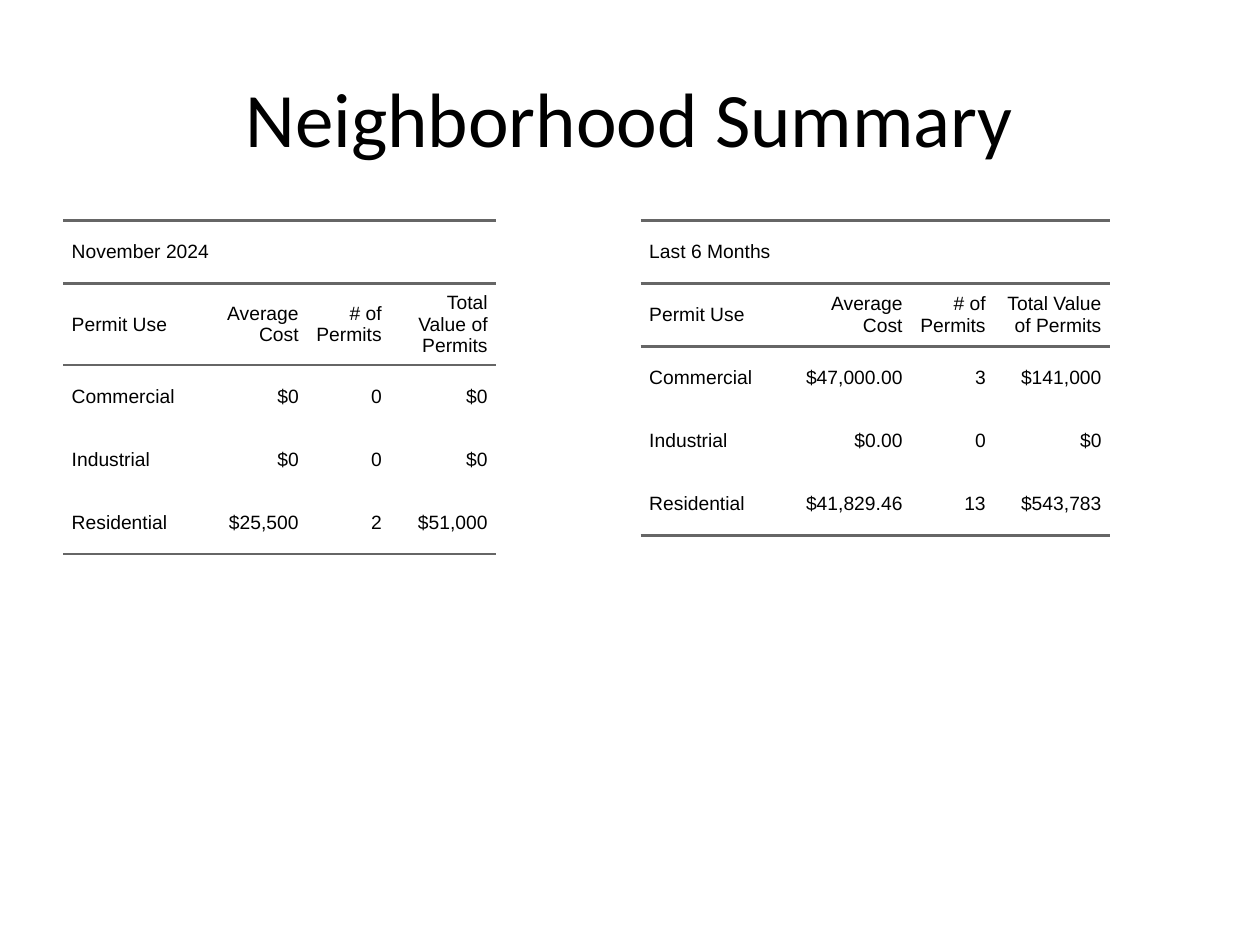
import pptx
import pptx.dml.color
import pptx.enum.text
import pptx.oxml
import pptx.oxml.ns
import pptx.util
from lxml import etree

Pt = pptx.util.Pt
Align = pptx.enum.text.PP_ALIGN
Anchor = pptx.enum.text.MSO_ANCHOR

BLACK = pptx.dml.color.RGBColor(0x00, 0x00, 0x00)
RULE_GRAY = pptx.dml.color.RGBColor(0x66, 0x66, 0x66)

HEADINGS = ["Permit Use", "Average Cost", "# of Permits", "Total Value of Permits"]
NOVEMBER = [
    ["Commercial", "$0", "0", "$0"],
    ["Industrial", "$0", "0", "$0"],
    ["Residential", "$25,500", "2", "$51,000"],
]
SIX_MONTHS = [
    ["Commercial", "$47,000.00", "3", "$141,000"],
    ["Industrial", "$0.00", "0", "$0"],
    ["Residential", "$41,829.46", "13", "$543,783"],
]


def write_text(frame, text, *, font, size, color, align, spacing=0):
    paragraph = frame.paragraphs[0]
    paragraph.alignment = align
    paragraph.space_before = paragraph.space_after = Pt(spacing)
    run = paragraph.add_run()
    run.text = text
    run.font.name = font
    run.font.size = Pt(size)
    run.font.color.rgb = color


def set_border(cell, side, color=None, width=1.5):
    properties = cell._tc.get_or_add_tcPr()
    line = etree.SubElement(properties, pptx.oxml.ns.qn(f"a:ln{side}"))
    if color is None:
        etree.SubElement(line, pptx.oxml.ns.qn("a:noFill"))
        return
    line.set("w", str(Pt(width)))
    fill = etree.SubElement(line, pptx.oxml.ns.qn("a:solidFill"))
    etree.SubElement(fill, pptx.oxml.ns.qn("a:srgbClr")).set("val", str(color))


class SlideBuilder:
    title_font = "Calibri"
    table_font = "Arial"
    cell_margin = 5
    row_height = 36

    def __init__(self, slide):
        self.slide = slide

    def title(self, text, left, top, width, height):
        shape = self.slide.shapes.title
        shape.left, shape.top = Pt(left), Pt(top)
        shape.width, shape.height = Pt(width), Pt(height)
        shape.text_frame.vertical_anchor = Anchor.MIDDLE
        write_text(shape.text_frame, text, font=self.title_font, size=44,
                   color=BLACK, align=Align.CENTER)

    def permit_table(self, caption, records, left, top, widths):
        rows = [[caption, "", "", ""], HEADINGS, *records]
        ruled_edges = {0, 1, 2, len(rows)}
        shape = self.slide.shapes.add_table(
            len(rows), len(widths), Pt(left), Pt(top),
            Pt(sum(widths)), Pt(self.row_height * len(rows)))
        table = shape.table
        table.first_row = table.horz_banding = False
        for column, width in zip(table.columns, widths):
            column.width = Pt(width)
        table.cell(0, 0).merge(table.cell(0, len(widths) - 1))
        for row_index, row in enumerate(rows):
            for column_index, text in enumerate(row):
                cell = table.cell(row_index, column_index)
                self.format_cell(cell, row_index, ruled_edges)
                if text:
                    write_text(cell.text_frame, text, font=self.table_font,
                               size=11, color=BLACK, spacing=5,
                               align=Align.RIGHT if column_index else Align.LEFT)

    def format_cell(self, cell, row_index, ruled_edges):
        cell.vertical_anchor = Anchor.MIDDLE
        cell.margin_left = cell.margin_right = Pt(self.cell_margin)
        cell.margin_top = cell.margin_bottom = Pt(self.cell_margin)
        set_border(cell, "L")
        set_border(cell, "R")
        for side, edge in (("T", row_index), ("B", row_index + 1)):
            set_border(cell, side, RULE_GRAY if edge in ruled_edges else None)
        cell.fill.background()


def main():
    presentation = pptx.Presentation()
    presentation.slide_width, presentation.slide_height = Pt(720), Pt(540)
    builder = SlideBuilder(presentation.slides.add_slide(presentation.slide_layouts[5]))
    builder.permit_table("November 2024", NOVEMBER, 36, 126, [79.2, 60.5, 47.5, 60.5])
    builder.permit_table("Last 6 Months", SIX_MONTHS, 366, 126, [79.2, 75.6, 47.5, 66.2])
    builder.title("Neighborhood Summary", 36, 21.6, 648, 90)
    presentation.save("out.pptx")


if __name__ == "__main__":
    main()
